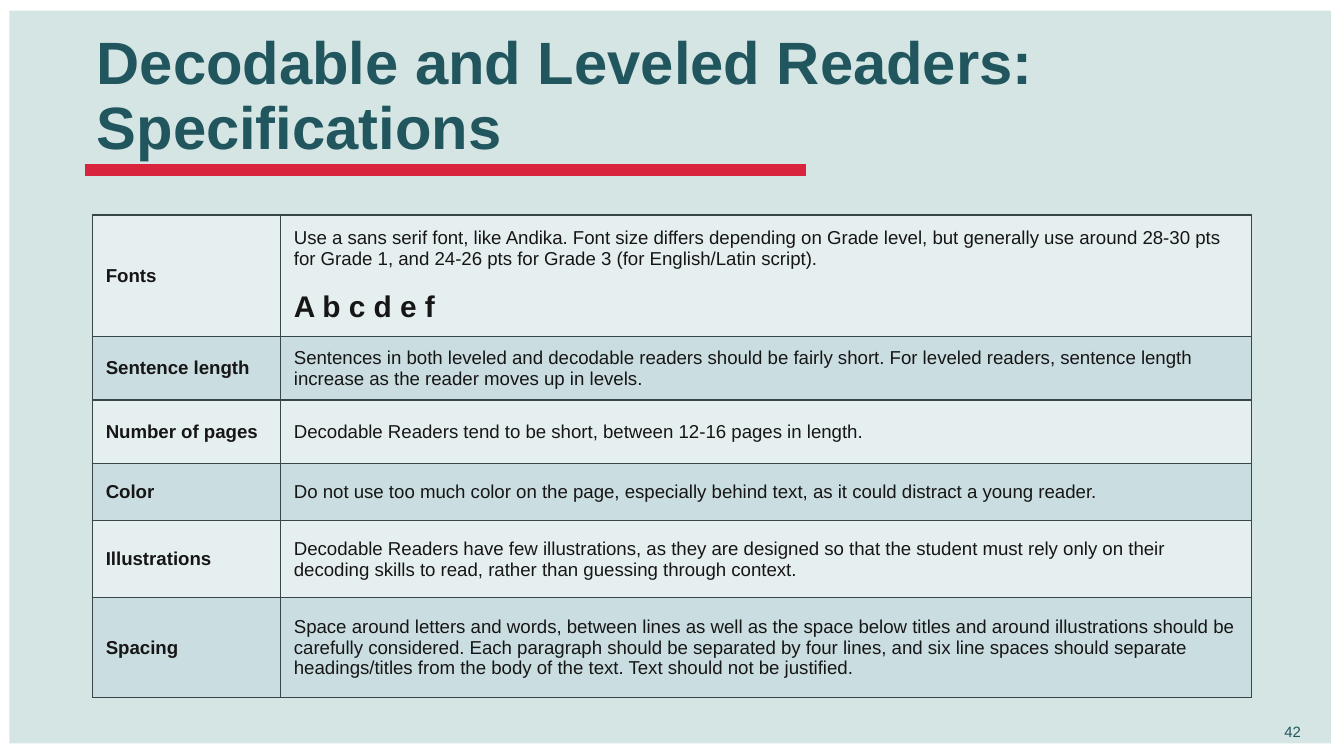
from lxml.etree import SubElement
from pptx import Presentation
from pptx.dml.color import RGBColor
from pptx.enum.shapes import MSO_CONNECTOR as CONNECTOR, MSO_SHAPE as SHAPE
from pptx.enum.text import MSO_ANCHOR as ANCHOR
from pptx.oxml import parse_xml
from pptx.oxml.ns import nsdecls, qn
from pptx.util import Pt

TEAL, RED, INK, BORDER = "21565E", "D8253D", "171616", "384648"
ROW_FILLS = ["E6EFF0", "CADDE1"]


def color(value):
    return RGBColor.from_string(value)


def write(para, text, size=10, bold=False, ink=INK, line_spacing=None, before=0):
    span = para.add_run()
    span.text = text
    span.font.name = "Arial"
    span.font.size = Pt(size)
    span.font.bold = bold
    span.font.color.rgb = color(ink)
    if line_spacing:
        para.line_spacing = line_spacing
    if before:
        para.space_before = Pt(before)


deck = Presentation()
deck.slide_width, deck.slide_height = Pt(720), Pt(405)
page = deck.slides.add_slide(deck.slide_layouts[6])

# Half-transparent backdrop
backdrop = page.shapes.add_shape(SHAPE.RECTANGLE, Pt(5), Pt(5.75), Pt(708), Pt(392.5))
backdrop.shadow.inherit = False
backdrop.fill.solid()
backdrop.fill.fore_color.rgb = color("AACCC9")
backdrop.line.fill.background()
SubElement(backdrop.fill._xPr.find(".//" + qn("a:srgbClr")), qn("a:alpha"), val="50000")

# Red rule under the title
rule = page.shapes.add_connector(CONNECTOR.STRAIGHT, Pt(45.5), Pt(91.25), Pt(432), Pt(91.25))
rule.line.color.rgb = color(RED)
rule.line.width = Pt(6.5)
SubElement(rule._element.spPr, qn("a:effectLst"))

# Title
title = page.shapes.add_textbox(Pt(44.75), Pt(13), Pt(620.5), Pt(78.5)).text_frame
title.word_wrap = True
title.vertical_anchor = ANCHOR.MIDDLE
write(title.paragraphs[0], "Decodable and Leveled Readers: Specifications",
      size=32, bold=True, ink=TEAL, line_spacing=0.9)

# Specifications table: label, description, row height
rows = [
    ("Fonts", "Use a sans serif font, like Andika. Font size differs depending on Grade level, "
     "but generally use around 28-30 pts for Grade 1, and 24-26 pts for Grade 3 "
     "(for English/Latin script).", 65),
    ("Sentence length", "Sentences in both leveled and decodable readers should be fairly short. "
     "For leveled readers, sentence length increase as the reader moves up in levels.", 34),
    ("Number of pages", "Decodable Readers tend to be short, between 12-16 pages in length.", 34),
    ("Color", "Do not use too much color on the page, especially behind text, "
     "as it could distract a young reader.", 30.75),
    ("Illustrations", "Decodable Readers have few illustrations, as they are designed so that "
     "the student must rely only on their decoding skills to read, "
     "rather than guessing through context.", 41.25),
    ("Spacing", "Space around letters and words, between lines as well as the space below titles "
     "and around illustrations should be carefully considered. Each paragraph should be "
     "separated by four lines, and six line spaces should separate headings/titles from the "
     "body of the text. Text should not be justified.", 53.5),
]
widths = [100.75, 520.25]
table = page.shapes.add_table(len(rows), len(widths), Pt(49.5), Pt(115.25),
                              Pt(sum(widths)), Pt(sum(row[2] for row in rows))).table
for column, width in zip(table.columns, widths):
    column.width = Pt(width)

for r, (label, description, height) in enumerate(rows):
    table.rows[r].height = Pt(height)
    for c, text in enumerate((label, description)):
        cell = table.cell(r, c)
        cell.vertical_anchor = ANCHOR.MIDDLE
        for side in ("lnL", "lnR", "lnT", "lnB"):
            cell._tc.get_or_add_tcPr().append(parse_xml(
                f'<a:{side} {nsdecls("a")} w="{Pt(1)}"><a:solidFill>'
                f'<a:srgbClr val="{BORDER}"/></a:solidFill></a:{side}>'))
        cell.fill.solid()
        cell.fill.fore_color.rgb = color(ROW_FILLS[r % 2])
        write(cell.text_frame.paragraphs[0], text, bold=c == 0)

# Font sample below the first description
write(table.cell(0, 1).text_frame.add_paragraph(), "A b c d e f", size=16, bold=True, before=11.5)

# Page number
number = page.shapes.add_textbox(Pt(681), Pt(383.75), Pt(25.25), Pt(17)).text_frame
number.word_wrap = True
write(number.paragraphs[0], "42", size=8, ink="20575E")

deck.save("out.pptx")
